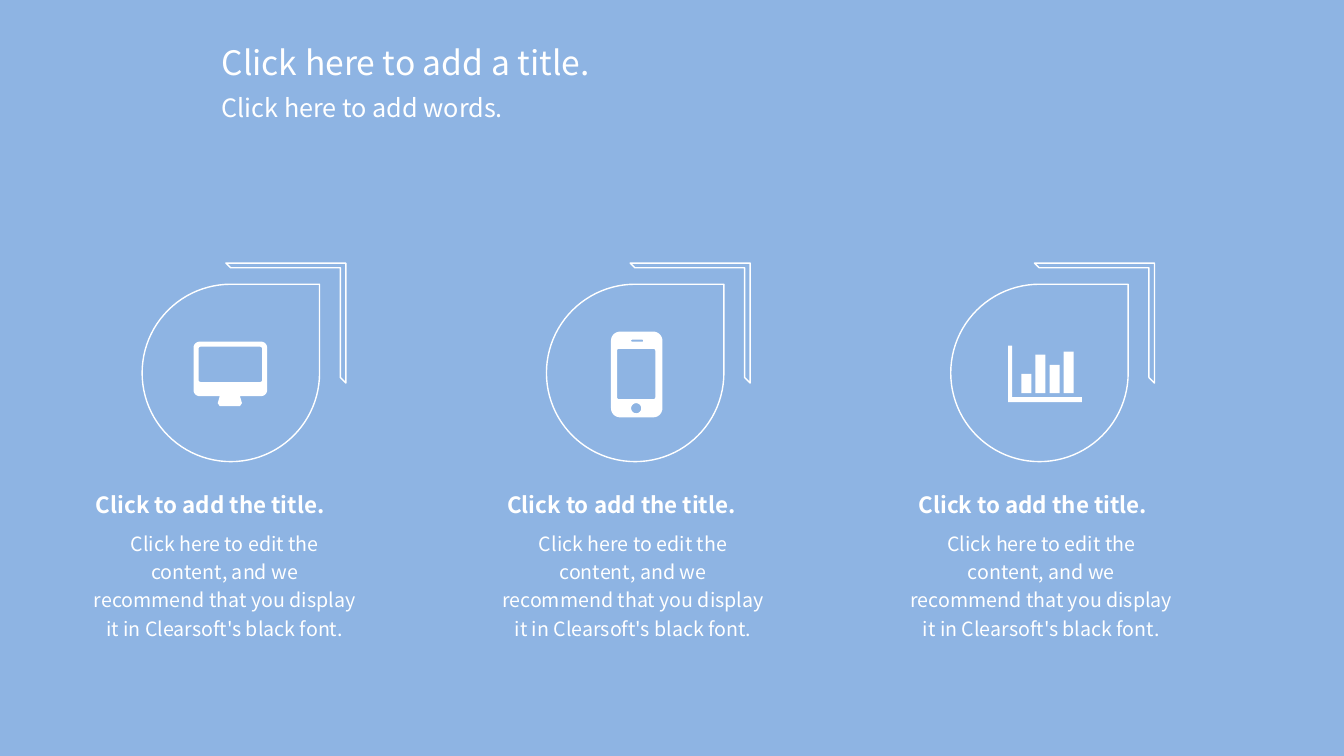
from math import cos, radians, sin

from pptx import Presentation
from pptx.dml.color import RGBColor
from pptx.enum.shapes import MSO_SHAPE as Shape
from pptx.enum.text import MSO_AUTO_SIZE as AutoSize, PP_ALIGN as Align
from pptx.util import Inches, Pt

FIRST_DROP, DROP_STEP, DROP_TOP = 1.41, 4.01, 2.82
FIRST_HEADING, HEADING_STEP = 0.3, 4.08
FIRST_BODY, BODY_STEP = 0.93, 4.05
HEADING = "Click to add the title."
BODY = ("Click here to edit the content, and we recommend that you display "
        "it in Clearsoft's black font.")


def color(value):
    return RGBColor.from_string(value)


def rounded(left, top, right, bottom, radius=0):
    steps = 10 if radius else 1
    corners = [
        (right - radius, top + radius, -90),
        (right - radius, bottom - radius, 0),
        (left + radius, bottom - radius, 90),
        (left + radius, top + radius, 180),
    ]
    points = []
    for x, y, start in corners:
        for step in range(steps + 1 if radius else 1):
            angle = radians(start + 90 * step / steps)
            points.append((x + radius * cos(angle), y + radius * sin(angle)))
    return points


def monitor_outlines():
    case = rounded(0.51, 0.57, 1.24, 1.11, 0.06)
    stand = [(0.97, 1.11), (0.99, 1.18), (0.97, 1.21),
             (0.77, 1.21), (0.75, 1.18), (0.77, 1.11)]
    middle = len(case) // 2
    screen = rounded(0.56, 0.62, 1.19, 0.97, 0.02)
    return [case[:middle] + stand + case[middle:], screen]


def phone_outlines():
    return [
        rounded(0.64, 0.47, 1.15, 1.32, 0.09),
        rounded(0.7, 0.64, 1.08, 1.14, 0.02),
        rounded(0.84, 0.55, 0.96, 0.57, 0.01),
        rounded(0.84, 1.18, 0.94, 1.28, 0.05),
    ]


def bars_outlines():
    axes = [(0.57, 0.61), (0.61, 0.61), (0.61, 1.12),
            (1.3, 1.12), (1.3, 1.17), (0.57, 1.17)]
    tops = [0.89, 0.7, 0.8, 0.67]
    bars = [rounded(0.7 + 0.14 * index, top, 0.8 + 0.14 * index, 1.08)
            for index, top in enumerate(tops)]
    return [axes] + bars


class SlideBuilder:
    font = "Noto Sans CJK SC"
    ink = "FFFFFF"
    background = "8EB4E3"

    def __init__(self, deck):
        self.slide = deck.slides.add_slide(deck.slide_layouts[6])
        fill = self.slide.background.fill
        fill.solid()
        fill.fore_color.rgb = color(self.background)

    def text(self, words, left, top, width, height, size, bold=False,
             align=Align.LEFT, inset=True, spacing=None, after=None):
        box = self.slide.shapes.add_textbox(
            Inches(left), Inches(top), Inches(width), Inches(height))
        frame = box.text_frame
        frame.word_wrap = True
        if inset:
            frame.auto_size = AutoSize.SHAPE_TO_FIT_TEXT
        else:
            frame.margin_left = frame.margin_right = 0
            frame.margin_top = frame.margin_bottom = 0
        para = frame.paragraphs[0]
        para.alignment = align
        if spacing:
            para.line_spacing = spacing
        if after:
            para.space_after = Pt(after)
        span = para.add_run()
        span.text = words
        span.font.name = self.font
        span.font.size = Pt(size)
        span.font.bold = bold
        span.font.color.rgb = color(self.ink)

    def outline(self, preset, left, top, side, rotation=0, adjustments=()):
        shape = self.slide.shapes.add_shape(
            preset, Inches(left), Inches(top), Inches(side), Inches(side))
        shape.shadow.inherit = False
        shape.rotation = rotation
        for index, value in enumerate(adjustments):
            shape.adjustments[index] = value
        shape.fill.background()
        shape.line.color.rgb = color(self.ink)
        shape.line.width = Pt(1)

    def icon(self, outlines, left, top):
        contours = [[(Inches(left + x), Inches(top + y)) for x, y in points]
                    for points in outlines]
        builder = self.slide.shapes.build_freeform(*contours[0][0])
        builder.add_line_segments(contours[0][1:], close=True)
        for contour in contours[1:]:
            builder.move_to(*contour[0])
            builder.add_line_segments(contour[1:], close=True)
        shape = builder.convert_to_shape()
        shape.shadow.inherit = False
        shape.fill.solid()
        shape.fill.fore_color.rgb = color(self.ink)
        shape.line.fill.background()


def main():
    deck = Presentation()
    deck.slide_width, deck.slide_height = Inches(13.33), Inches(7.5)
    page = SlideBuilder(deck)
    page.text("Click here to add a title.", 2.1, 0.37, 3.97, 0.5, 24,
              align=Align.JUSTIFY)
    page.text("Click here to add words.", 2.1, 0.87, 3.97, 0.4, 18)

    icons = [monitor_outlines(), phone_outlines(), bars_outlines()]
    for column, outlines in enumerate(icons):
        left = FIRST_DROP + DROP_STEP * column
        page.outline(Shape.TEAR, left, DROP_TOP, 1.76)
        page.outline(Shape.HALF_FRAME, left + 0.83, DROP_TOP - 0.21, 1.19,
                     rotation=90, adjustments=(0.046, 0.039))
        page.icon(outlines, left, DROP_TOP)
        page.text(HEADING, FIRST_HEADING + HEADING_STEP * column, 4.82,
                  3.57, 0.37, 16, bold=True, align=Align.CENTER)
        page.text(BODY, FIRST_BODY + BODY_STEP * column, 5.23, 2.6, 0.55, 14,
                  align=Align.CENTER, inset=False, spacing=1.2, after=6)

    deck.save("out.pptx")


if __name__ == "__main__":
    main()
